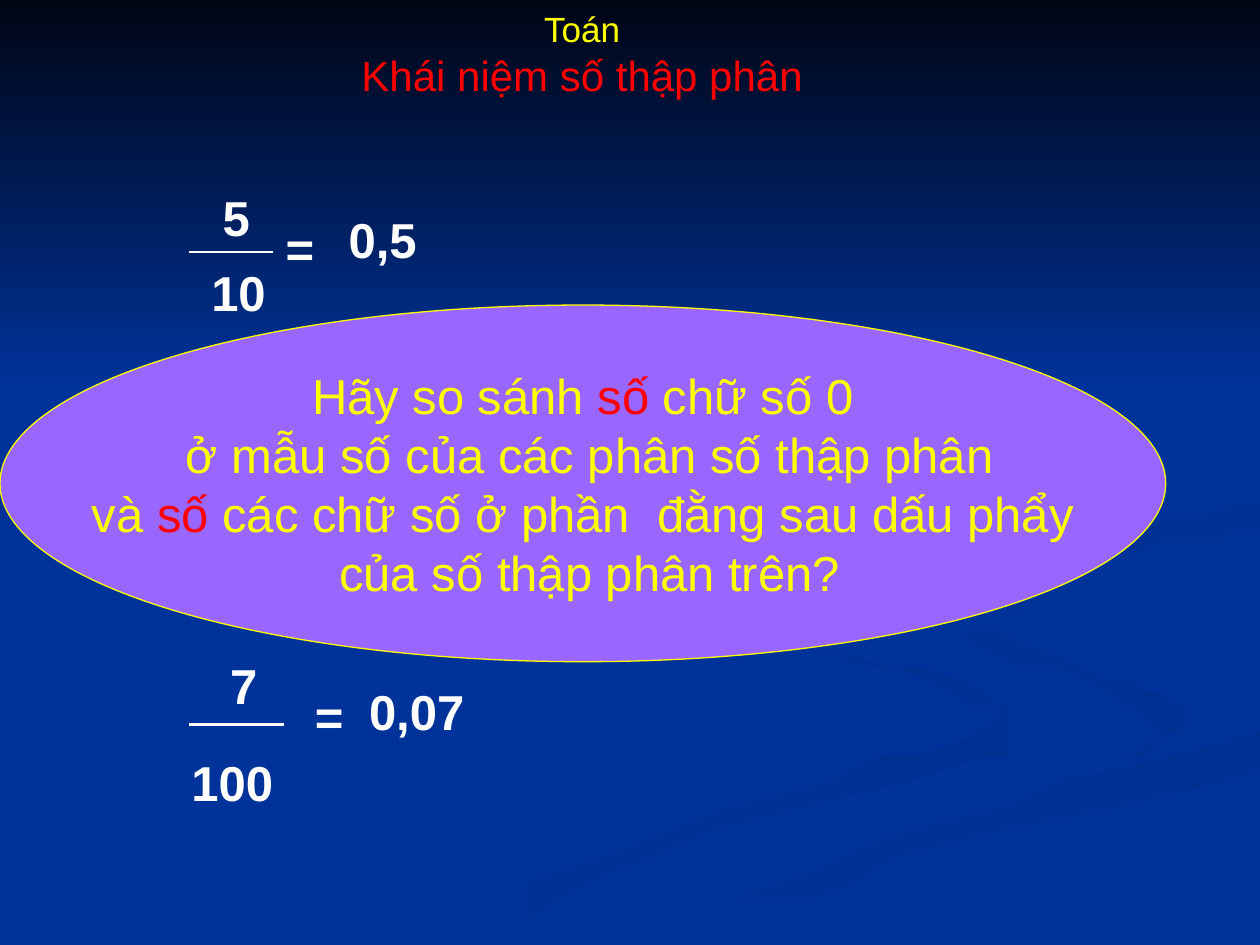
from dataclasses import dataclass

from pptx import Presentation
from pptx.dml.color import RGBColor as Rgb
from pptx.enum.shapes import MSO_CONNECTOR as Connector, MSO_SHAPE as Shape
from pptx.enum.text import MSO_ANCHOR as Anchor, MSO_AUTO_SIZE as AutoSize, PP_ALIGN as Align
from pptx.oxml.ns import qn
from pptx.util import Cm, Pt


@dataclass(frozen=True)
class Theme:
    font: str = "Arial"
    blue: str = "003399"
    shadow: str = "003091"
    night: str = "000514"
    yellow: str = "FFFF00"
    red: str = "FF0000"
    violet: str = "9966FF"
    white: str = "FFFFFF"
    label: int = 20
    heading: int = 24
    body: int = 28


theme = Theme()


def style(para, size, color, align=Align.LEFT, bold=False):
    """Give a paragraph its type."""
    para.alignment = align
    para.font.name = theme.font
    para.font.size = Pt(size)
    para.font.bold = bold
    para.font.color.rgb = Rgb.from_string(color)


def shade(shape, start, end, angle):
    """Fill a backdrop shape with a clockwise-angled gradient, no outline."""
    shape.shadow.inherit = False
    shape.line.fill.background()
    shape.fill.gradient()
    shape.fill.gradient_angle = (360 - angle) % 360
    for stop, color in zip(shape.fill.gradient_stops, (start, end)):
        stop.color.rgb = Rgb.from_string(color)


deck = Presentation()
deck.slide_width, deck.slide_height = Cm(25.4), Cm(19.05)
page = deck.slides.add_slide(deck.slide_layouts[5])
page.background.fill.solid()
page.background.fill.fore_color.rgb = Rgb.from_string(theme.blue)

# Backdrop swirls: colours, angle, key points in tenths of an inch
swirls = [
    (theme.blue, theme.shadow, 0, [
        (78, 55), (61, 50), (57.5, 46), (59, 49), (76, 55), (78, 58),
        (58, 64), (30, 75), (36, 75), (56, 66.5), (78, 60.5), (80, 58)]),
    (theme.blue, theme.shadow, 45, [
        (94, 57), (88, 53.5), (75, 49), (72.4, 46.4), (75, 50), (88, 55),
        (91.7, 58), (89.4, 60.5)]),
    (theme.shadow, theme.blue, 90, [
        (50, 75), (57, 75), (75, 67), (99.8, 61), (99.8, 58), (76, 65), (57, 72)]),
    (theme.shadow, theme.blue, 45, [
        (78, 46), (82.6, 49.6), (80.5, 47), (88, 44), (99.8, 42), (99.8, 40), (83, 43.5)]),
    (theme.shadow, theme.blue, 45, [
        (68, 43), (84, 39.5), (89.4, 34), (86, 29), (76, 23.3), (85, 28),
        (89, 33.5), (84, 38), (62, 42.5), (57.7, 46), (62, 50), (59.3, 47)]),
]
steps = 6
for start, end, angle, keys in swirls:
    # Catmull-Rom curve through the key points
    curve = []
    for i in range(len(keys)):
        corners = [keys[(i + j) % len(keys)] for j in (-1, 0, 1, 2)]
        for t in (step / steps for step in range(steps)):
            curve.append([
                b + t / 2 * (c - a + t * (2 * a - 5 * b + 4 * c - d + t * (3 * (b - c) + d - a)))
                for a, b, c, d in zip(*corners)])
    outline = page.shapes.build_freeform(*curve[0], scale=Cm(0.254))
    outline.add_line_segments(curve[1:], close=True)
    shade(outline.convert_to_shape(), start, end, angle)

# Night sky across the top
sky = page.shapes.add_shape(Shape.RECTANGLE, 0, 0, deck.slide_width, Cm(7.82))
shade(sky, theme.night, theme.blue, 90)

# Title, brought in front of the sky
title = page.shapes.title
page.shapes._spTree.append(title._element)
title.left, title.top, title.width, title.height = Cm(7.01), Cm(0.03), Cm(9.45), Cm(2.13)
frame = title.text_frame
frame.text = "Toán\nKhái niệm số thập phân"
frame.word_wrap = False
frame.auto_size = AutoSize.NONE
frame.vertical_anchor = Anchor.TOP
style(frame.paragraphs[0], theme.label, theme.yellow, Align.CENTER)
style(frame.paragraphs[1], theme.heading, theme.red, Align.CENTER)

# Question bubble: the highlighted word is a run of its own
bubble = page.shapes.add_shape(Shape.OVAL, 0, Cm(6.15), Cm(23.5), Cm(7.19))
bubble.shadow.inherit = False
bubble.fill.solid()
bubble.fill.fore_color.rgb = Rgb.from_string(theme.violet)
bubble.line.color.rgb = Rgb.from_string(theme.yellow)
bubble.line.width = Pt(0.75)
frame = bubble.text_frame
frame.word_wrap = False
frame.vertical_anchor = Anchor.MIDDLE
question = [
    ["Hãy so sánh ", "số", " chữ số 0"],
    [" ở mẫu số của các phân số thập phân"],
    [" và ", "số", " các chữ số ở phần  đằng sau dấu phẩy "],
    [" của số thập phân trên?"],
]
for index, pieces in enumerate(question):
    para = frame.add_paragraph() if index else frame.paragraphs[0]
    style(para, theme.body, theme.yellow, Align.CENTER)
    for piece in pieces:
        span = para.add_run()
        span.text = piece
        color = theme.red if piece == "số" else theme.yellow
        span.font.color.rgb = Rgb.from_string(color)

# Fractions and their decimals: text, left, top, width in cm
terms = [
    ("5", 4.24, 3.66, 1.07), ("10", 4.01, 5.16, 1.63),
    ("=", 5.51, 4.29, 1.09), ("0,5", 6.78, 4.09, 1.9),
    ("7", 4.39, 13.08, 1.07), ("100", 3.61, 15.04, 2.18),
    ("=", 6.1, 13.72, 1.09), ("0,07", 7.19, 13.61, 2.46),
]
for text, left, top, width in terms:
    box = page.shapes.add_textbox(Cm(left), Cm(top), Cm(width), Cm(1.45))
    box.text_frame.text = text
    box.text_frame.word_wrap = False
    style(box.text_frame.paragraphs[0], theme.body, theme.white, bold=True)

# Fraction bars
for right, height in [(5.51, 5.08), (5.72, 14.6)]:
    bar = page.shapes.add_connector(
        Connector.STRAIGHT, Cm(3.81), Cm(height), Cm(right), Cm(height))
    bar.line.color.rgb = Rgb.from_string(theme.white)
    bar.line.width = Pt(1.5)
    properties = bar._element.spPr
    properties.append(properties.makeelement(qn("a:effectLst"), {}))

deck.save("out.pptx")
